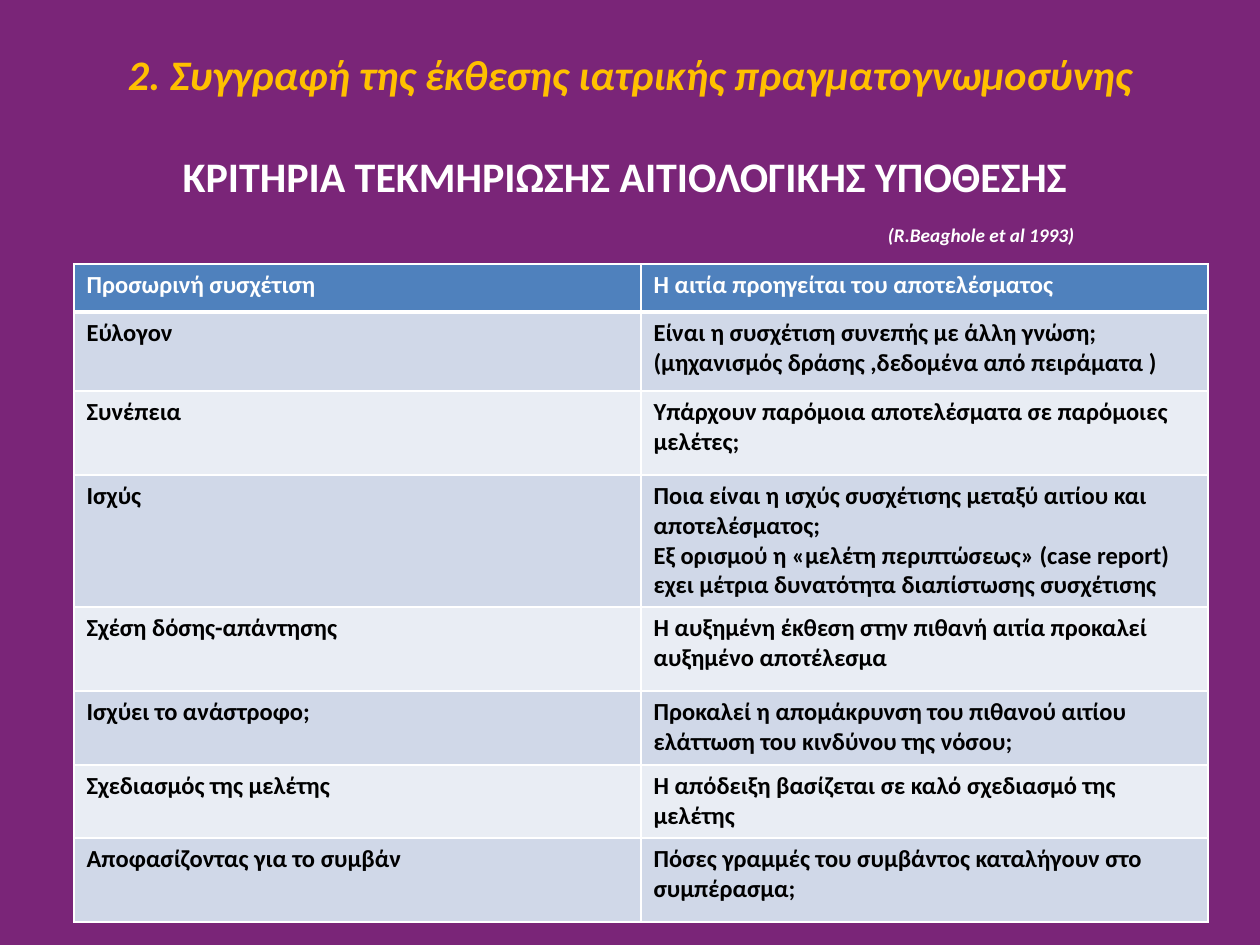
from dataclasses import dataclass

from lxml.etree import SubElement
from pptx import Presentation
from pptx.dml.color import RGBColor
from pptx.enum.text import MSO_ANCHOR, PP_ALIGN
from pptx.oxml.ns import qn
from pptx.util import Pt

PX = 914400 / 126


@dataclass(frozen=True)
class Theme:
    font: str = "Calibri"
    background: str = "7A2578"
    accent: str = "FFC000"
    light: str = "FFFFFF"
    dark: str = "000000"
    header: str = "4F81BD"
    bands: tuple = ("D0D8E8", "E9EDF4")
    title_size: int = 24
    cite_size: int = 11
    cell_size: int = 14


THEME = Theme()

CRITERIA = [
    ("Προσωρινή συσχέτιση", "Η αιτία προηγείται του αποτελέσματος"),
    ("Εύλογον", "Είναι η συσχέτιση συνεπής με άλλη γνώση; "
                "(μηχανισμός δράσης ,δεδομένα από πειράματα )"),
    ("Συνέπεια", "Υπάρχουν παρόμοια αποτελέσματα σε παρόμοιες μελέτες;"),
    ("Ισχύς", "Ποια είναι η ισχύς συσχέτισης μεταξύ αιτίου και αποτελέσματος;\n"
              "Εξ ορισμού η «μελέτη περιπτώσεως» (case report) "
              "εχει μέτρια δυνατότητα διαπίστωσης συσχέτισης"),
    ("Σχέση δόσης-απάντησης",
     "Η αυξημένη έκθεση στην πιθανή αιτία προκαλεί αυξημένο αποτέλεσμα"),
    ("Ισχύει το ανάστροφο;",
     "Προκαλεί η απομάκρυνση του πιθανού αιτίου ελάττωση του κινδύνου της νόσου;"),
    ("Σχεδιασμός της μελέτης", "Η απόδειξη βασίζεται σε καλό σχεδιασμό της μελέτης"),
    ("Αποφασίζοντας για το συμβάν",
     "Πόσες γραμμές του συμβάντος καταλήγουν στο συμπέρασμα;"),
]
ROW_HEIGHTS = [48, 79, 84, 132, 84, 74, 73, 84]


def px(n):
    return round(n * PX)


def rgb(color):
    return RGBColor.from_string(color)


def write(p, text, size, color, italic=False, align=PP_ALIGN.LEFT, before=0, right=0):
    p.alignment = align
    p.space_before = Pt(before)
    if right:
        p._p.get_or_add_pPr().set("marR", str(px(right)))
    r = p.add_run()
    r.text = text
    r.font.name = THEME.font
    r.font.size = Pt(size)
    r.font.bold = True
    r.font.italic = italic
    r.font.color.rgb = rgb(color)


def set_borders(cell, top=1, bottom=1):
    tcPr = cell._tc.get_or_add_tcPr()
    for side, width in (("L", 1), ("R", 1), ("T", top), ("B", bottom)):
        ln = SubElement(tcPr, qn(f"a:ln{side}"), w=str(Pt(width)))
        fill = SubElement(ln, qn("a:solidFill"))
        SubElement(fill, qn("a:srgbClr"), val=THEME.light)


def add_heading(s, x, y, w, h):
    tf = s.shapes.add_textbox(px(x), px(y), px(w), px(h)).text_frame
    tf.word_wrap = True
    tf.vertical_anchor = MSO_ANCHOR.TOP
    tf.margin_top = px(11)
    write(tf.paragraphs[0], "2. Συγγραφή της έκθεσης ιατρικής πραγματογνωμοσύνης",
          THEME.title_size, THEME.accent, italic=True, align=PP_ALIGN.CENTER)
    write(tf.add_paragraph(), "ΚΡΙΤΗΡΙΑ ΤΕΚΜΗΡΙΩΣΗΣ ΑΙΤΙΟΛΟΓΙΚΗΣ ΥΠΟΘΕΣΗΣ",
          THEME.title_size, THEME.light, align=PP_ALIGN.CENTER, before=29, right=10)
    write(tf.add_paragraph(), "(R.Beaghole et al 1993)", THEME.cite_size, THEME.light,
          italic=True, align=PP_ALIGN.RIGHT, before=13, right=110)


def add_criteria(s, x, y, w):
    table = s.shapes.add_table(len(CRITERIA), 2, px(x), px(y), px(w),
                               px(sum(ROW_HEIGHTS))).table
    for i, (texts, height) in enumerate(zip(CRITERIA, ROW_HEIGHTS)):
        table.rows[i].height = px(height)
        fill = THEME.bands[(i - 1) % 2] if i else THEME.header
        color = THEME.dark if i else THEME.light
        for j, text in enumerate(texts):
            cell = table.cell(i, j)
            set_borders(cell, top=3 if i == 1 else 1, bottom=1 if i else 3)
            cell.fill.solid()
            cell.fill.fore_color.rgb = rgb(fill)
            tf = cell.text_frame
            for k, line in enumerate(text.split("\n")):
                p = tf.add_paragraph() if k else tf.paragraphs[0]
                write(p, line, THEME.cell_size, color)


def main():
    prs = Presentation()
    prs.slide_width, prs.slide_height = px(1260), px(945)
    s = prs.slides.add_slide(prs.slide_layouts[6])
    s.background.fill.solid()
    s.background.fill.fore_color.rgb = rgb(THEME.background)
    add_heading(s, 63, 38, 1134, 227)
    add_criteria(s, 74, 264, 1134)
    prs.save("out.pptx")


if __name__ == "__main__":
    main()
